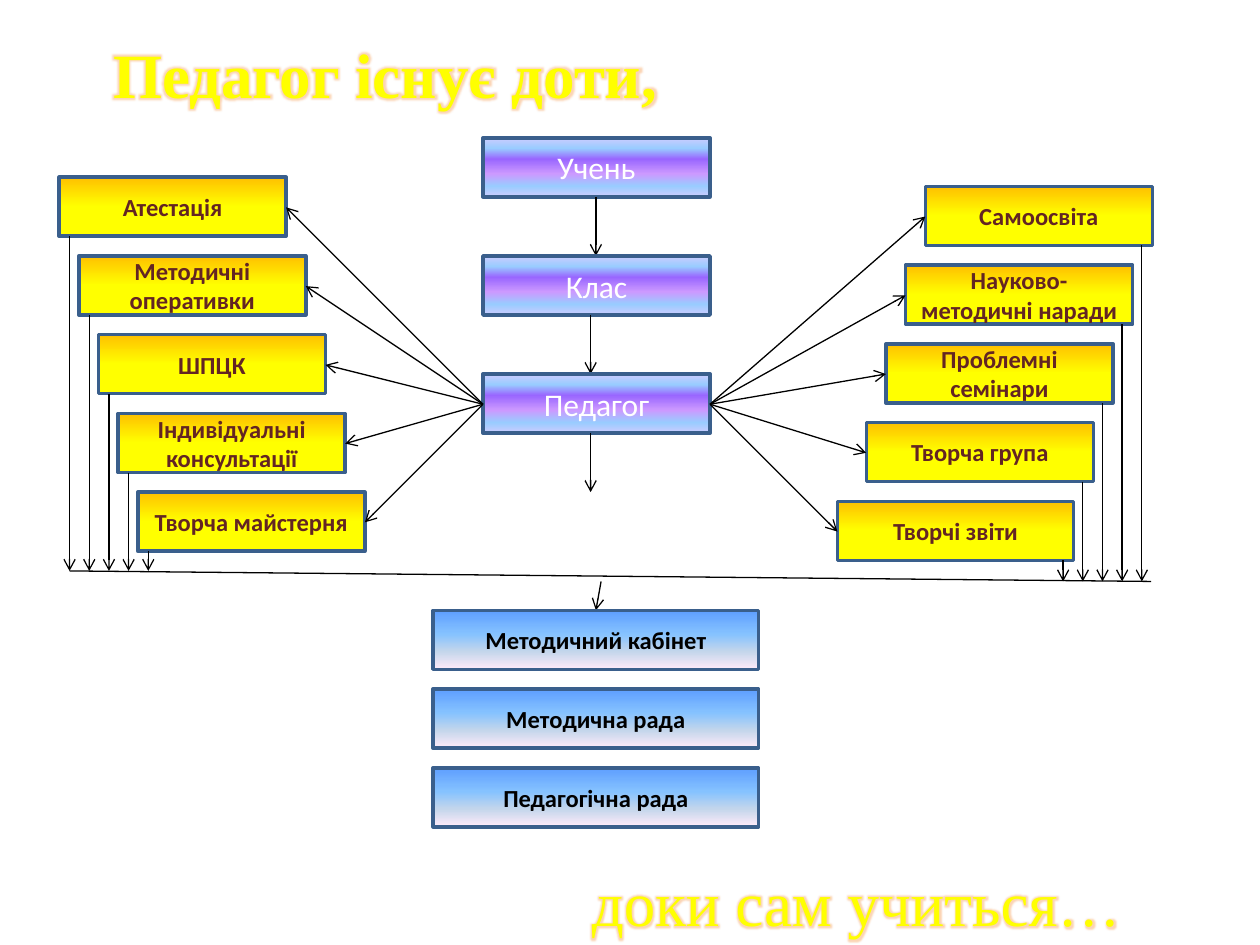
"""Build a slide on the teacher's methodical work: a scheme of boxes and arrows."""
import dataclasses

import lxml.etree
import pptx
import pptx.dml.color
import pptx.enum.shapes
import pptx.enum.text
import pptx.oxml
import pptx.oxml.ns
import pptx.util

PX = 9525
KIND = pptx.enum.shapes.MSO_SHAPE.RECTANGLE
LINK = pptx.enum.shapes.MSO_CONNECTOR.STRAIGHT
MID = pptx.enum.text.PP_ALIGN.CENTER
qn = pptx.oxml.ns.qn


def rgb(code):
    return pptx.dml.color.RGBColor.from_string(code)


def face(name, size, bold):
    return {"name": name, "size": pptx.util.Pt(size), "bold": bold}


@dataclasses.dataclass(frozen=True)
class Theme:
    edge: str = "3A5F8C"
    ink: str = "000000"
    gold: str = "FFFF00"
    glow: str = "F79646"
    edge_pt: float = 2
    link_pt: float = 0.75
    core: tuple = ("FFFFFF", face("Calibri", 18, False), (
        (0, "CCCCFF"), (18, "99CCFF"), (36, "9966FF"),
        (61, "CC99FF"), (82, "99CCFF"), (100, "CCCCFF")))
    form: tuple = ("632523", face("Calibri", 14, True), (
        (0, "FFC000"), (50, "FFFF00"), (100, "FFFF00")))
    board: tuple = ("000000", face("Calibri", 14, True), (
        (0, "5E9EFF"), (40, "85C2FF"), (70, "C4D6EB"), (100, "FFEBFA")))


class Deck:
    """Hold the theme and the current slide."""

    def __init__(self, theme):
        self.theme = theme
        self.file = pptx.Presentation()
        self.file.slide_width = 960 * PX
        self.file.slide_height = 720 * PX
        self.page = self.file.slides.add_slide(self.file.slide_layouts[6])

    def label(self, frame, text, color, style):
        """Put one centred run in a frame."""
        para = frame.paragraphs[0]
        para.alignment = MID
        run = para.add_run()
        run.text = text
        for key, value in style.items():
            setattr(run.font, key, value)
        run.font.color.rgb = rgb(color)
        return run

    def box(self, text, look, *area):
        """Add a box with a vertical gradient."""
        color, style, stops = look
        shape = self.page.shapes.add_shape(KIND, *(n * PX for n in area))
        shape.shadow.inherit = False
        shape.fill.gradient()
        shape.fill.gradient_angle = 270
        ramp = next(shape._element.iter(qn("a:gsLst")))
        ramp.clear()
        for place, tint in stops:
            stop = lxml.etree.SubElement(ramp, qn("a:gs"), pos=str(place * 1000))
            lxml.etree.SubElement(stop, qn("a:srgbClr"), val=tint)
        shape.line.color.rgb = rgb(self.theme.edge)
        shape.line.width = pptx.util.Pt(self.theme.edge_pt)
        shape.text_frame.word_wrap = True
        self.label(shape.text_frame, text, color, style)

    def link(self, start, end, head=True):
        """Add a straight line, with an arrowhead at its end by default."""
        line = self.page.shapes.add_connector(
            LINK, *(n * PX for n in (*start, *end)))
        line.line.color.rgb = rgb(self.theme.ink)
        line.line.width = pptx.util.Pt(self.theme.link_pt)
        if head:
            stroke = next(line._element.iter(qn("a:ln")))
            lxml.etree.SubElement(stroke, qn("a:tailEnd"), type="arrow")
        lxml.etree.SubElement(line._element.spPr, qn("a:effectLst"))

    def title(self, text, bold, width, *area):
        """Add a glowing, outlined line of text."""
        frame = self.page.shapes.add_textbox(*(n * PX for n in area)).text_frame
        frame.word_wrap = False
        gold = self.theme.gold
        run = self.label(frame, text, gold, face("Times New Roman", 36, bold))
        props = run._r.get_or_add_rPr()
        space = pptx.oxml.ns.nsdecls("a")
        props.insert(0, pptx.oxml.parse_xml(
            f'<a:ln {space} w="{pptx.util.Pt(width)}"><a:solidFill>'
            f'<a:srgbClr val="{gold}"/></a:solidFill></a:ln>'))
        props.insert(2, pptx.oxml.parse_xml(
            f'<a:effectLst {space}><a:glow rad="{pptx.util.Pt(5)}">'
            f'<a:srgbClr val="{self.theme.glow}"><a:alpha val="40000"/>'
            '</a:srgbClr></a:glow></a:effectLst>'))


def main():
    theme = Theme()
    deck = Deck(theme)
    high, step, shift = 45, 60, 15
    wide, hub, mid = 173, 368, 308
    left = ("Атестація", "Методичні оперативки", "ШПЦК",
            "Індивідуальні консультації", "Творча майстерня")
    right = ("Самоосвіта", "Науково-методичні наради", "Проблемні семінари",
             "Творча група", "Творчі звіти")

    deck.title("Педагог існує доти, ", True, 1, 37, 22, 525, 65)
    deck.title("доки сам учиться…", False, 0.75, 375, 653, 555, 36)

    for i, (text, x) in enumerate(zip(("Учень", "Клас", "Педагог"), (454, 450, 450))):
        top = 105 + 90 * i
        deck.box(text, theme.core, hub, top, wide, high)
        deck.link((x, top + high), (x, top + 2 * high))

    for i, text in enumerate(left):
        x, y = 45 + shift * i, 135 + step * i
        deck.box(text, theme.form, x, y, wide, high)
        deck.link((hub, mid), (x + wide, y + 23))
        deck.link((x + 8, y + high), (x + 8, 435))

    for i, text in enumerate(right):
        end = 878 - shift * i
        x, y = end - wide, 142 + step * i
        if text == right[-1]:
            x -= 7
        deck.box(text, theme.form, x, y, end - x, high)
        deck.link((hub + wide, mid), (x, y + 23))
        deck.link((end - 8, y + high), (end - 8, 443))

    deck.link((53, 435), (877, 443), head=False)
    deck.link((458, 443), (454, 465))
    for i, text in enumerate(("Методичний кабінет", "Методична рада", "Педагогічна рада")):
        deck.box(text, theme.board, 330, 465 + step * i, 248, high)

    deck.file.save("out.pptx")


if __name__ == "__main__":
    main()
